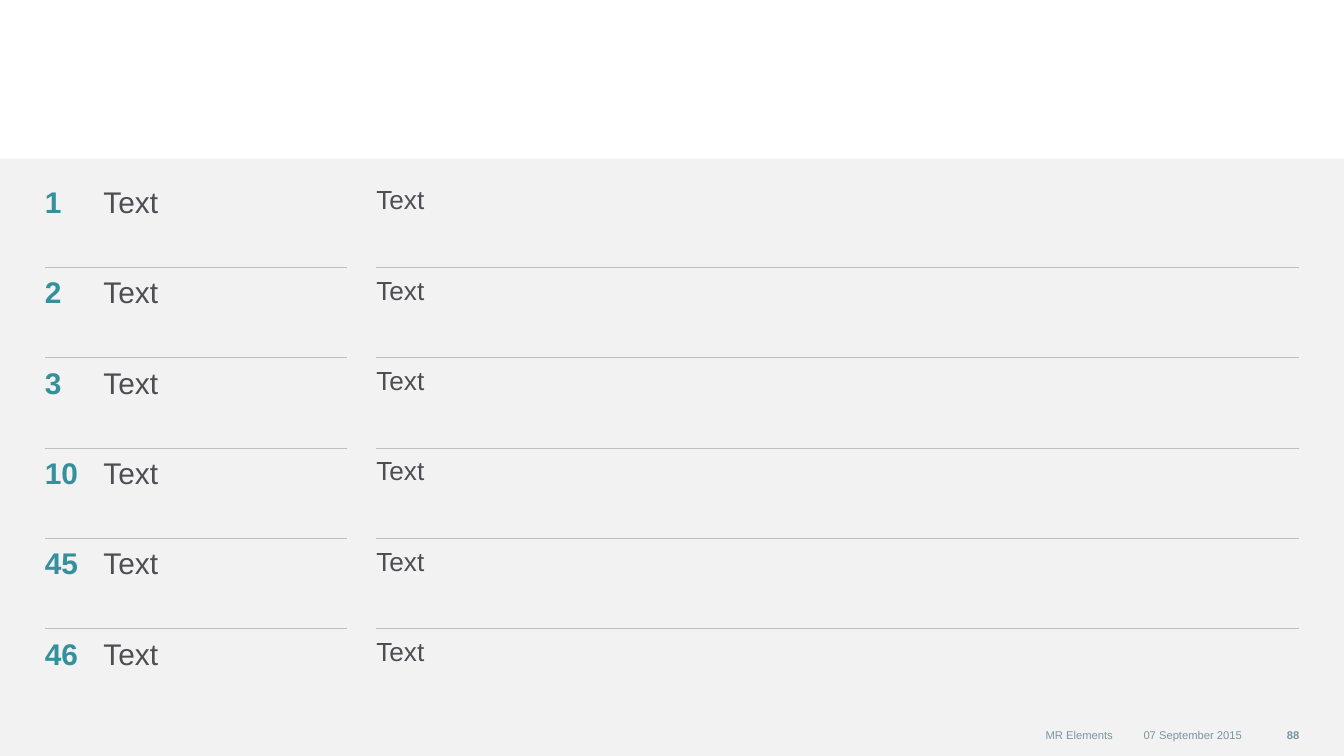
import pptx
import pptx.dml.color
import pptx.enum.shapes
import pptx.enum.text
import pptx.util
import lxml.etree

SLIDE_WIDTH = 10
SLIDE_HEIGHT = SLIDE_WIDTH * 9 / 16
MARGIN = SLIDE_WIDTH / 30
RIGHT_EDGE = SLIDE_WIDTH - MARGIN
PANEL_TOP = 1.18
FIRST_RULE, LAST_RULE = 1.99, 4.68
FOOTER_TOP, FOOTER_HEIGHT = 5.36, 0.22

AGENDA = [
    ("1", "Text", "Text"),
    ("2", "Text", "Text"),
    ("3", "Text", "Text"),
    ("10", "Text", "Text"),
    ("45", "Text", "Text"),
    ("46", "Text", "Text"),
]
COLUMNS = [
    {"left": MARGIN, "right": 0.72, "size": 16, "color": "34909C", "bold": True},
    {"left": 0.77, "right": 2.58, "size": 16, "color": "4D4E53", "bold": False},
    {"left": 2.8, "right": RIGHT_EDGE, "size": 14, "color": "4D4E53", "bold": False},
]
RULES = [(MARGIN, 2.58), (2.8, RIGHT_EDGE)]
FOOTER = [
    ("MR Elements", 4.35, 8.28, False),
    ("07 September 2015", 8.33, 9.24, False),
    ("88", 9.24, RIGHT_EDGE, True),
]

inches = pptx.util.Inches


def rgb(value):
    return pptx.dml.color.RGBColor.from_string(value)


def add_text(slide, text, left, right, top, height, size, color, bold, inset=0):
    box = slide.shapes.add_textbox(
        inches(left), inches(top), inches(right - left), inches(height))
    frame = box.text_frame
    frame.word_wrap = True
    frame.margin_left = frame.margin_right = frame.margin_bottom = 0
    frame.margin_top = inches(inset)
    paragraph = frame.paragraphs[0]
    paragraph.text = text
    paragraph.font.name = "Arial"
    paragraph.font.size = pptx.util.Pt(size)
    paragraph.font.bold = bold
    paragraph.font.color.rgb = rgb(color)
    return frame


def add_rule(slide, start, end, y):
    rule = slide.shapes.add_connector(
        pptx.enum.shapes.MSO_CONNECTOR.STRAIGHT, inches(start), inches(y), inches(end), inches(y))
    rule.line.color.rgb = rgb("BFBFBF")
    rule.line.width = pptx.util.Pt(0.5)
    lxml.etree.SubElement(rule._element.spPr, pptx.oxml.ns.qn("a:effectLst"))


def add_panel(slide):
    panel = slide.shapes.add_shape(
        pptx.enum.shapes.MSO_SHAPE.RECTANGLE, 0, inches(PANEL_TOP),
        inches(SLIDE_WIDTH), inches(SLIDE_HEIGHT - PANEL_TOP))
    panel.shadow.inherit = False
    panel.fill.solid()
    panel.fill.fore_color.rgb = rgb("F2F2F2")
    panel.line.fill.background()


def add_agenda(slide):
    row_height = (LAST_RULE - FIRST_RULE) / (len(AGENDA) - 2)
    for index, row in enumerate(AGENDA):
        top = FIRST_RULE + (index - 1) * row_height
        for text, column in zip(row, COLUMNS):
            add_text(slide, text, top=top, height=row_height, inset=0.05, **column)
        if index:
            for start, end in RULES:
                add_rule(slide, start, end, top)


def add_footer(slide):
    for text, left, right, bold in FOOTER:
        frame = add_text(slide, text, left, right, FOOTER_TOP, FOOTER_HEIGHT, 6, "7A94A3", bold)
        frame.vertical_anchor = pptx.enum.text.MSO_ANCHOR.MIDDLE
        frame.paragraphs[0].alignment = pptx.enum.text.PP_ALIGN.RIGHT


def main():
    presentation = pptx.Presentation()
    presentation.slide_width = inches(SLIDE_WIDTH)
    presentation.slide_height = inches(SLIDE_HEIGHT)
    slide = presentation.slides.add_slide(presentation.slide_layouts[6])
    add_panel(slide)
    add_agenda(slide)
    add_footer(slide)
    presentation.save("out.pptx")


if __name__ == "__main__":
    main()
